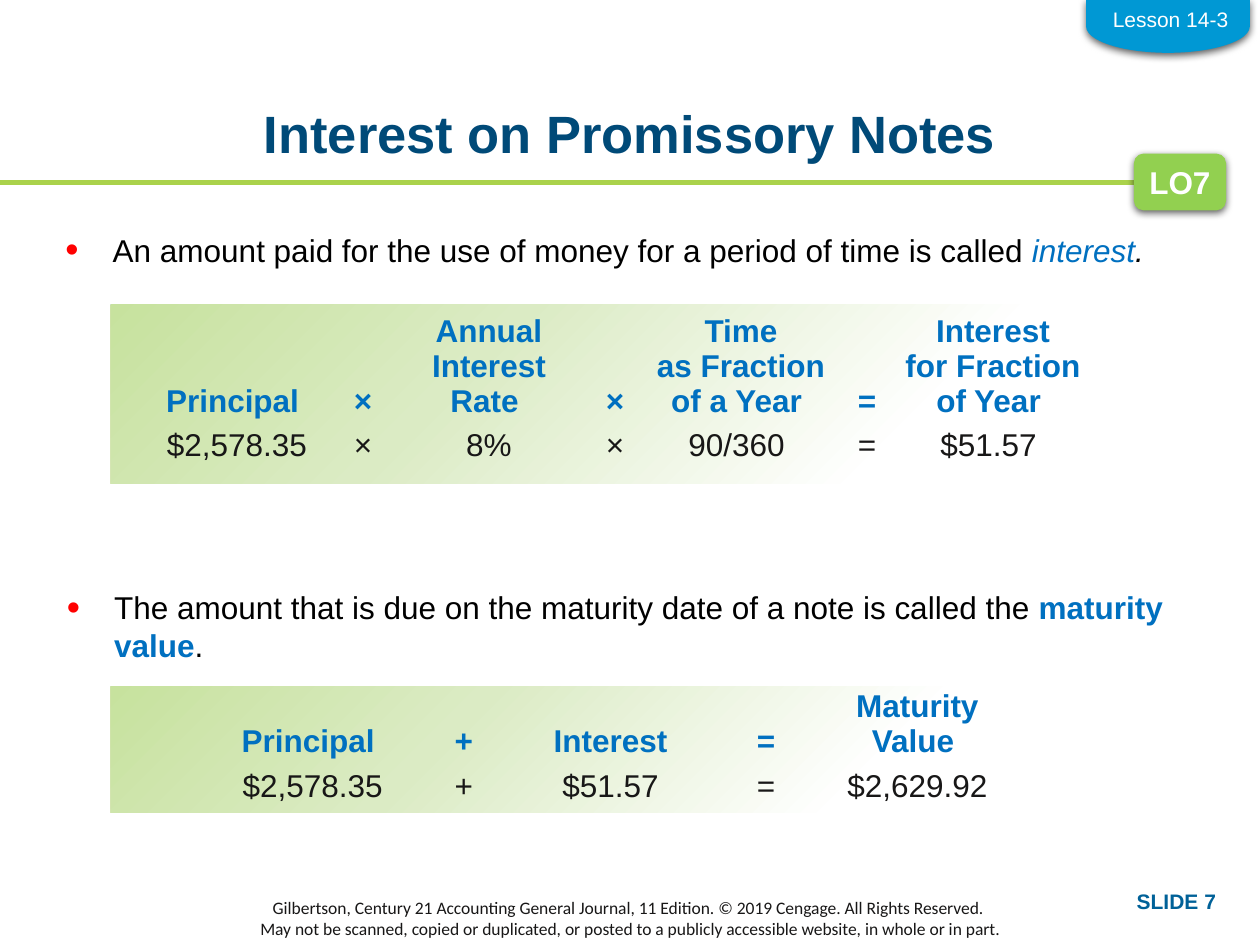
import lxml.etree
import pptx
import pptx.dml.color
import pptx.enum.shapes
import pptx.enum.text
import pptx.oxml
import pptx.oxml.ns
import pptx.util

Pt = pptx.util.Pt
RGBColor = pptx.dml.color.RGBColor
SHAPE = pptx.enum.shapes.MSO_SHAPE
ALIGN = pptx.enum.text.PP_ALIGN
ANCHOR = pptx.enum.text.MSO_ANCHOR
qn = pptx.oxml.ns.qn

BLACK = RGBColor(0x00, 0x00, 0x00)
WHITE = RGBColor(0xFF, 0xFF, 0xFF)
INK = RGBColor(0x18, 0x17, 0x17)
NAVY = RGBColor(0x00, 0x4A, 0x78)
TERM_BLUE = RGBColor(0x00, 0x70, 0xC0)
NUMBER_BLUE = RGBColor(0x00, 0x61, 0x98)
TAB_BLUE = RGBColor(0x00, 0x98, 0xD4)
RULE_GREEN = RGBColor(0xAA, 0xD2, 0x4B)
BADGE_GREEN = RGBColor(0x92, 0xD0, 0x50)
BULLET_RED = RGBColor(0xFF, 0x00, 0x00)
PANEL_STOPS = [(0, RGBColor(0xC7, 0xE2, 0x9E)),
               (35, RGBColor(0xDB, 0xEB, 0xC4)),
               (77, WHITE)]
PLAIN_TABLE_STYLE = "{2D5ABB26-0587-4C30-8999-92F81FD0307C}"


def add_xml(parent, tag, **attributes):
    element = lxml.etree.SubElement(parent, qn(tag))
    for name, value in attributes.items():
        element.set(name, str(value))
    return element


def format_font(font, size=18, color=BLACK, bold=False, italic=False, name="Arial"):
    font.size, font.name = Pt(size), name
    font.bold, font.italic = bold, italic
    font.color.rgb = color


def write_text(paragraph, text, align=ALIGN.CENTER, **font_format):
    paragraph.text = text
    paragraph.alignment = align
    for run in paragraph.runs:
        format_font(run.font, **font_format)


def place(shape, left, top, width, height):
    shape.left, shape.top = Pt(left), Pt(top)
    shape.width, shape.height = Pt(width), Pt(height)


def set_margins(frame, left, top, right, bottom):
    frame.margin_left, frame.margin_top = Pt(left), Pt(top)
    frame.margin_right, frame.margin_bottom = Pt(right), Pt(bottom)


def add_text(slide, text, box, wrap=True, anchor=ANCHOR.TOP, **text_format):
    frame = slide.shapes.add_textbox(*map(Pt, box)).text_frame
    frame.word_wrap = wrap
    frame.vertical_anchor = anchor
    for index, line in enumerate(text.split("\n")):
        paragraph = frame.add_paragraph() if index else frame.paragraphs[0]
        write_text(paragraph, line, **text_format)


def add_shape(slide, kind, box, color, shadow=False):
    shape = slide.shapes.add_shape(kind, *map(Pt, box))
    shape.fill.solid()
    shape.fill.fore_color.rgb = color
    shape.line.fill.background()
    shape.shadow.inherit = False
    if shadow:
        effects = shape.element.spPr.find(qn("a:effectLst"))
        outer = add_xml(effects, "a:outerShdw", blurRad=Pt(4.5), dist=Pt(1.5),
                        dir=5400000, algn="ctr", rotWithShape=0)
        shadow_color = add_xml(outer, "a:srgbClr", val=BLACK)
        add_xml(shadow_color, "a:alpha", val=63000)
    return shape


def add_panel(slide, box):
    """Rectangle that fades out from its top left corner."""
    panel = add_shape(slide, SHAPE.RECTANGLE, box, WHITE)
    properties = panel.element.spPr
    gradient = pptx.oxml.parse_xml(
        f"<a:gradFill {pptx.oxml.ns.nsdecls('a')} rotWithShape='1'/>")
    stops = add_xml(gradient, "a:gsLst")
    for position, color in PANEL_STOPS:
        stop = add_xml(stops, "a:gs", pos=position * 1000)
        add_xml(stop, "a:srgbClr", val=color)
    fade = add_xml(gradient, "a:path", path="circle")
    add_xml(fade, "a:fillToRect", r=100000, b=100000)
    properties.replace(properties.find(qn("a:solidFill")), gradient)


def add_formula_row(slide, texts, left, top, height, widths, **font_format):
    frame = slide.shapes.add_table(1, len(texts), Pt(left), Pt(top),
                                   Pt(sum(widths)), Pt(height))
    table = frame.table
    table.first_row = table.horz_banding = False
    frame.element.find(".//" + qn("a:tableStyleId")).text = PLAIN_TABLE_STYLE
    for column, width, text in zip(table.columns, widths, texts):
        column.width = Pt(width)
    for cell, text in zip(table.rows[0].cells, texts):
        cell.fill.background()
        cell.vertical_anchor = ANCHOR.BOTTOM
        set_margins(cell, 0.75, 0.75, 0.75, 0)
        write_text(cell.text_frame.paragraphs[0], text, **font_format)


def fill_bullet(placeholder, box, runs):
    place(placeholder, *box)
    frame = placeholder.text_frame
    frame.auto_size = pptx.enum.text.MSO_AUTO_SIZE.NONE
    frame.vertical_anchor = ANCHOR.TOP
    paragraph = frame.paragraphs[0]
    paragraph.space_before = Pt(0)
    properties = paragraph._p.get_or_add_pPr()
    properties.set("marL", str(Pt(27)))
    properties.set("indent", str(Pt(-27)))
    bullet_color = add_xml(properties, "a:buClr")
    add_xml(bullet_color, "a:srgbClr", val=BULLET_RED)
    add_xml(properties, "a:buSzPct", val=120000)
    add_xml(properties, "a:buFont", typeface="Arial")
    add_xml(properties, "a:buChar", char="•")
    for text, font_format in runs:
        run = paragraph.add_run()
        run.text = text
        format_font(run.font, **font_format)


def add_rule(slide):
    rule = slide.shapes.add_connector(pptx.enum.shapes.MSO_CONNECTOR.STRAIGHT,
                                      Pt(0), Pt(104.4), Pt(684), Pt(104.4))
    rule.line.color.rgb = RULE_GREEN
    rule.line.width = Pt(3)
    add_xml(rule.element.spPr, "a:effectLst")


def main():
    presentation = pptx.Presentation()
    presentation.slide_width, presentation.slide_height = Pt(720), Pt(540)
    slide = presentation.slides.add_slide(presentation.slide_layouts[3])
    title, interest_bullet, maturity_bullet = slide.placeholders

    # Title and rule
    add_rule(slide)
    place(title, 49.7, 61.9, 620.6, 53.3)
    set_margins(title.text_frame, 0, 0, 0, 0)
    title.text_frame.vertical_anchor = ANCHOR.TOP
    heading = title.text_frame.paragraphs[0]
    write_text(heading, "Interest on Promissory Notes", size=30, color=NAVY, bold=True)
    heading.line_spacing = 0.9

    # Definitions
    fill_bullet(interest_bullet, (30.2, 128.2, 648, 40), [
        ("An amount paid for the use of money for a period of time is called ", {}),
        ("interest", {"color": TERM_BLUE, "italic": True}),
        (".", {"italic": True})])
    fill_bullet(maturity_bullet, (31, 332.6, 648, 60), [
        ("The amount that is due on the maturity date of a note is called the ", {}),
        ("maturity value", {"color": TERM_BLUE, "bold": True}),
        (".", {})])

    # Interest formula
    label = {"color": TERM_BLUE, "bold": True}
    value = {"color": INK}
    interest_widths = [108, 36] * 3 + [108]
    add_panel(slide, (63.4, 174.2, 584.6, 102.2))
    add_formula_row(slide, ["Principal ", "×", "Annual\nInterest\nRate ", "×",
                            "Time\nas Fraction\nof a Year ", "=",
                            "Interest\nfor Fraction\nof Year "],
                    81.4, 174.2, 65.5, interest_widths, **label)
    add_formula_row(slide, ["$2,578.35", "×", "8%", "×", "90/360 ", "=", "$51.57 "],
                    81.4, 242.6, 22, interest_widths, **value)

    # Maturity value formula
    maturity_widths = [86.4] * 5
    add_panel(slide, (63.4, 392.4, 556.6, 72))
    add_formula_row(slide, ["Principal ", "+", "Interest ", "=", "Maturity Value "],
                    135.4, 390.2, 43.9, maturity_widths, **label)
    add_formula_row(slide, ["$2,578.35", "+", "$51.57 ", "=", "$2,629.92 "],
                    135.4, 437.8, 22, maturity_widths, **value)

    # Objective badge
    badge = add_shape(slide, SHAPE.ROUNDED_RECTANGLE, (648, 87.8, 52.6, 32.4),
                      BADGE_GREEN, shadow=True)
    badge.text_frame.word_wrap = False
    write_text(badge.text_frame.paragraphs[0], "LO7", color=WHITE, bold=True)

    # Lesson tab
    tab = add_shape(slide, SHAPE.FLOWCHART_DELAY, (652.3, -31.7, 30.2, 93.6),
                    TAB_BLUE, shadow=True)
    tab.rotation = 90
    add_text(slide, "Lesson 14-3", (628.6, 0, 80.6, 21.6), wrap=False,
             size=12, color=WHITE)

    # Footer
    add_text(slide, "Gilbertson, Century 21 Accounting General Journal, 11 Edition. "
             "© 2019 Cengage. All Rights Reserved. \n"
             "May not be scanned, copied or duplicated, or posted to a publicly "
             "accessible website, in whole or in part.",
             (0, 514, 720, 21.6), anchor=ANCHOR.MIDDLE,
             size=10, color=INK, name="Calibri")
    add_text(slide, "SLIDE 7", (558, 504, 144, 21.6), align=ALIGN.RIGHT,
             size=12, color=NUMBER_BLUE, bold=True)

    presentation.save("out.pptx")


if __name__ == "__main__":
    main()
